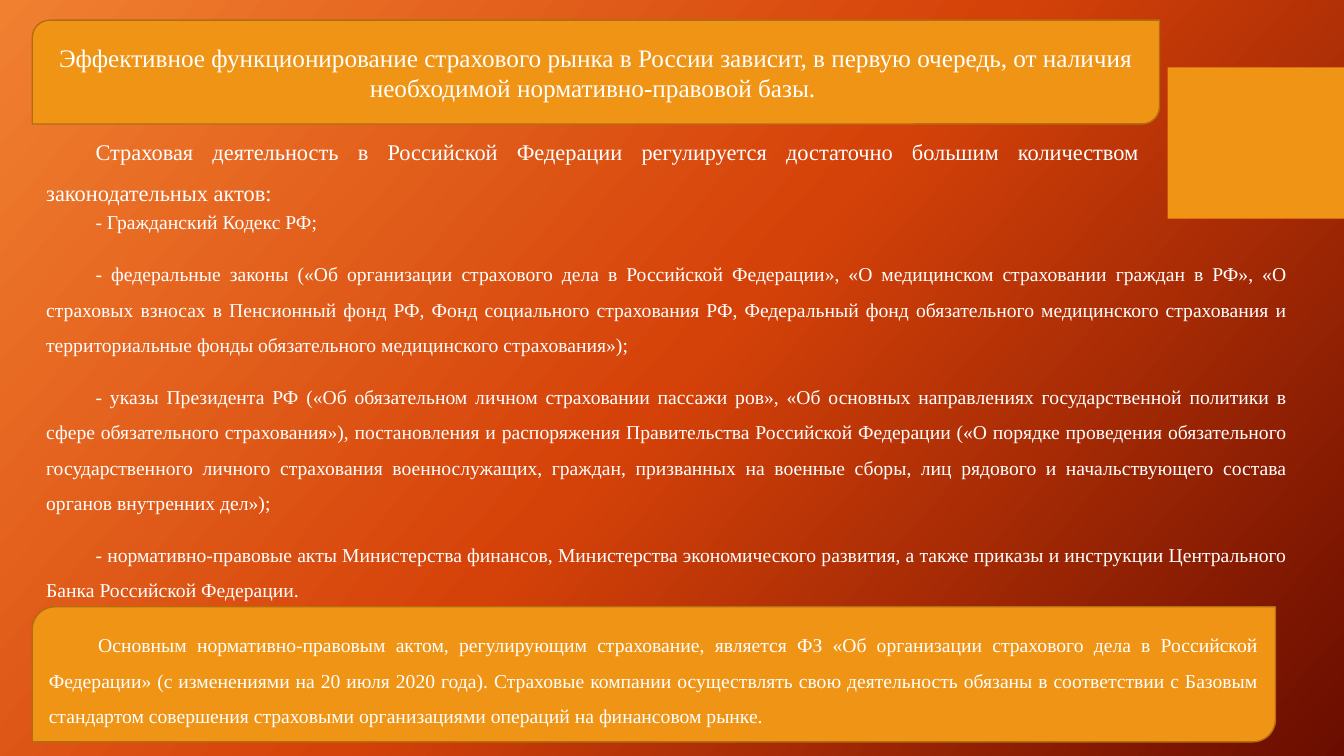
from copy import deepcopy
from dataclasses import dataclass

from pptx import Presentation
from pptx import util as u
from pptx.dml.color import RGBColor
from pptx.enum import shapes, text
from pptx.oxml.ns import qn

WIDE, HIGH = u.Inches(13.33), u.Inches(7.5)
WHITE, AMBER, BROWN = "FFFFFF", "F09415", "B26D10"
GLOW = ((0, "F18031"), (0.5, "D54209"), (1, "6A0D00"))


@dataclass
class Block:
    """Area in percent of the slide, with its text and look."""
    left: float
    top: float
    width: float
    height: float
    lines: tuple[str, ...] = ()
    size: int = 14
    body: bool = True
    form: shapes.MSO_SHAPE | None = None
    edge: str = ""


LEAF = shapes.MSO_SHAPE.ROUND_2_DIAG_RECTANGLE
BLOCKS = (
    Block(86.87, 8.93, 13.13, 20, form=shapes.MSO_SHAPE.RECTANGLE),
    Block(2.4, 2.67, 83.87, 13.73, (
        "Эффективное функционирование страхового рынка в России зависит, в первую очередь, "
        "от наличия необходимой нормативно-правовой базы. ",
    ), size=18, body=False, form=LEAF, edge=BROWN),
    Block(2.7, 15.87, 82.82, 11.47, (
        "Страховая деятельность в Российской Федерации регулируется достаточно большим "
        "количеством законодательных актов: ",
    ), size=16),
    Block(2.7, 25.6, 93.85, 54.67, (
        "- Гражданский Кодекс РФ;",
        "- федеральные законы («Об организации страхового дела в Российской Федерации», "
        "«О медицинском страховании граждан в РФ», «О страховых взносах в Пенсионный фонд РФ, "
        "Фонд социального страхования РФ, Федеральный фонд обязательного медицинского "
        "страхования и территориальные фонды обязательного медицинского страхования»);",
        "- указы Президента РФ («Об обязательном личном страховании пассажи ров», "
        "«Об основных направлениях государственной политики в сфере обязательного "
        "страхования»), постановления и распоряжения Правительства Российской Федерации "
        "(«О порядке проведения обязательного государственного личного страхования "
        "военнослужащих, граждан, призванных на военные сборы, лиц рядового и "
        "начальствующего состава органов внутренних дел»); ",
        "- нормативно-правовые акты Министерства финансов, Министерства экономического "
        "развития, а также приказы и инструкции Центрального Банка Российской Федерации.",
    )),
    Block(2.4, 80.27, 92.5, 17.87, (
        "Основным нормативно-правовым актом, регулирующим страхование, является ФЗ "
        "«Об организации страхового дела в Российской Федерации» (с изменениями на 20 июля "
        "2020 года). Страховые компании осуществлять свою деятельность обязаны в "
        "соответствии с Базовым стандартом совершения страховыми организациями операций "
        "на финансовом рынке.",
    ), form=LEAF, edge=BROWN),
)


def tint(code: str) -> RGBColor:
    return RGBColor.from_string(code)


def paint(slide) -> None:
    fill = slide.background.fill
    fill.gradient()
    fill.gradient_angle = 318
    stops = next(slide.element.iter(qn("a:gsLst")))
    stops.append(deepcopy(stops[-1]))
    for stop, (place, code) in zip(fill.gradient_stops, GLOW):
        stop.position = place
        stop.color.rgb = tint(code)


def write(frame, block: Block) -> None:
    frame.word_wrap = True
    for num, line in enumerate(block.lines):
        para = frame.add_paragraph() if num else frame.paragraphs[0]
        para.text = line
        para.alignment = text.PP_ALIGN.JUSTIFY if block.body else text.PP_ALIGN.CENTER
        if block.body:
            para.line_spacing = 1.5
            para._p.get_or_add_pPr().set("indent", str(u.Inches(0.49)))
        if num:
            para.space_before = u.Pt(12)
        font = para.font
        font.name, font.size = "Times New Roman", u.Pt(block.size)
        font.color.rgb = tint(WHITE)


def draw(slide, block: Block) -> None:
    area = [round(share * full / 100) for share, full in (
        (block.left, WIDE), (block.top, HIGH), (block.width, WIDE), (block.height, HIGH))]
    if block.form is None:
        item = slide.shapes.add_textbox(*area)
    else:
        item = slide.shapes.add_shape(block.form, *area)
        item.shadow.inherit = False
        item.fill.solid()
        item.fill.fore_color.rgb = tint(AMBER)
        if block.edge:
            item.line.color.rgb = tint(block.edge)
            item.line.width = u.Pt(1)
        else:
            item.line.fill.background()
        item.text_frame.vertical_anchor = text.MSO_ANCHOR.MIDDLE
    write(item.text_frame, block)


def main() -> None:
    deck = Presentation()
    deck.slide_width, deck.slide_height = WIDE, HIGH
    slide = deck.slides.add_slide(deck.slide_layouts[6])
    paint(slide)
    for block in BLOCKS:
        draw(slide, block)
    deck.save("out.pptx")


if __name__ == "__main__":
    main()
